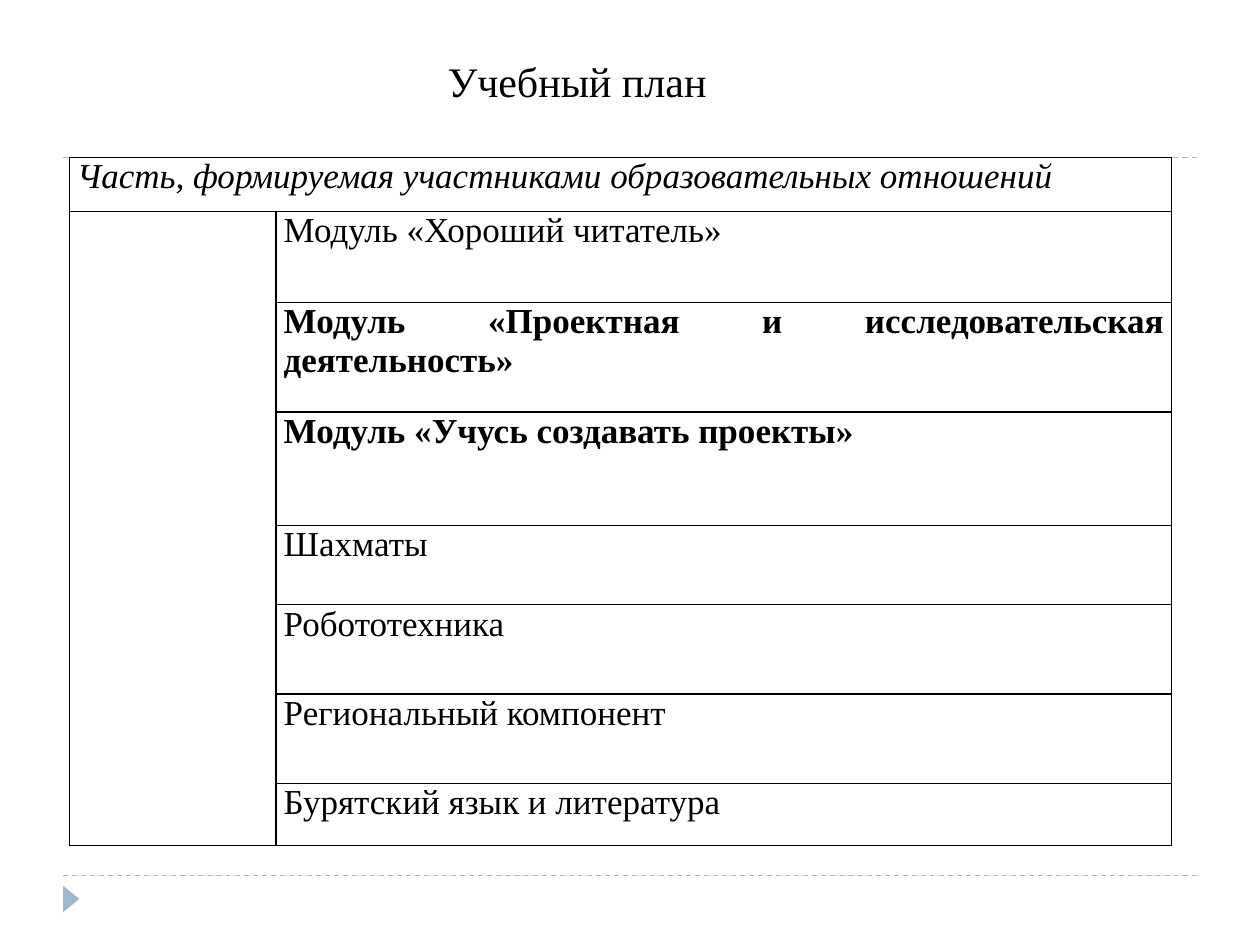
import pptx
import pptx.util
import pptx.dml.color
import pptx.enum.dml
import pptx.enum.shapes
import pptx.enum.text
import pptx.oxml.ns
from lxml import etree

Pt = pptx.util.Pt
FONT = "Times New Roman"
COLORS = {"text": "000000", "border": "000000", "accent": "9FB8CD"}
COLUMN_WIDTHS = [118.08, 511.92]
ROW_HEIGHTS = [30.96, 51.84, 62.64, 64.8, 45.36, 51.12, 51.12, 35.28]
SECTION = "Часть, формируемая участниками образовательных отношений\u00a0"
MODULES = [
    ("Модуль «Хороший читатель»", False),
    ("Модуль «Проектная и исследовательская деятельность»", True),
    ("Модуль «Учусь создавать проекты»", True),
    ("Шахматы", False),
    ("Робототехника", False),
    ("Региональный компонент", False),
    ("Бурятский язык и литература", False),
]


def color(name):
    return pptx.dml.color.RGBColor.from_string(COLORS[name])


def add_element(parent, tag, **attributes):
    return etree.SubElement(parent, pptx.oxml.ns.qn(tag), attributes)


def add_span(para, text, size, bold=False, italic=False):
    span = para.add_run()
    span.text = text
    span.font.name = FONT
    span.font.size = Pt(size)
    span.font.bold = bold
    span.font.italic = italic
    span.font.color.rgb = color("text")


def add_rule(page, left, top, width):
    rule = page.shapes.add_connector(
        pptx.enum.shapes.MSO_CONNECTOR.STRAIGHT,
        Pt(left), Pt(top), Pt(left + width), Pt(top))
    rule.line.color.rgb = color("accent")
    rule.line.width = Pt(0.75)
    rule.line.dash_style = pptx.enum.dml.MSO_LINE.DASH
    add_element(rule._element.spPr, "a:effectLst")


def add_marker(page, left, top, width, height):
    marker = page.shapes.add_shape(
        pptx.enum.shapes.MSO_SHAPE.ISOSCELES_TRIANGLE,
        Pt(left), Pt(top), Pt(width), Pt(height))
    marker.rotation = 90
    marker.shadow.inherit = False
    marker.fill.solid()
    marker.fill.fore_color.rgb = color("accent")
    marker.line.fill.background()


def add_title(page, left, top, width, height):
    box = page.shapes.add_textbox(Pt(left), Pt(top), Pt(width), Pt(height))
    frame = box.text_frame
    frame.word_wrap = False
    frame.auto_size = pptx.enum.text.MSO_AUTO_SIZE.SHAPE_TO_FIT_TEXT
    frame.vertical_anchor = pptx.enum.text.MSO_ANCHOR.MIDDLE
    para = frame.paragraphs[0]
    para.alignment = pptx.enum.text.PP_ALIGN.CENTER
    add_span(para, "Учебный план", 24)


def style_cell(cell):
    cell.margin_left = cell.margin_right = Pt(4.5)
    cell.margin_top = cell.margin_bottom = Pt(0)
    properties = cell._tc.get_or_add_tcPr()
    for side in ("a:lnL", "a:lnR", "a:lnT", "a:lnB"):
        border = add_element(properties, side, w=str(Pt(1)))
        fill = add_element(border, "a:solidFill")
        add_element(fill, "a:srgbClr", val=COLORS["border"])
    cell.fill.background()


def fill_cell(cell, text, bold=False, italic=False):
    para = cell.text_frame.paragraphs[0]
    para.alignment = pptx.enum.text.PP_ALIGN.JUSTIFY
    add_span(para, text, 20, bold, italic)


def add_plan(page, left, top, width, height):
    table = page.shapes.add_table(
        len(ROW_HEIGHTS), len(COLUMN_WIDTHS),
        Pt(left), Pt(top), Pt(width), Pt(height)).table
    table.first_row = False
    table.horz_banding = False
    for column, column_width in zip(table.columns, COLUMN_WIDTHS):
        column.width = Pt(column_width)
    for row, row_height in zip(table.rows, ROW_HEIGHTS):
        row.height = Pt(row_height)
    for cell in table.iter_cells():
        style_cell(cell)
    table.cell(0, 0).merge(table.cell(0, 1))
    table.cell(1, 0).merge(table.cell(len(MODULES), 0))
    fill_cell(table.cell(0, 0), SECTION, italic=True)
    for index, (name, bold) in enumerate(MODULES, start=1):
        fill_cell(table.cell(index, 1), name, bold)


def main():
    deck = pptx.Presentation()
    deck.slide_width, deck.slide_height = Pt(720), Pt(540)
    page = deck.slides.add_slide(deck.slide_layouts[6])
    for top in (500.4, 90):
        add_rule(page, 36, top, 648)
    add_marker(page, 33.12, 509.04, 15.12, 9.36)
    add_plan(page, 39.6, 90, sum(COLUMN_WIDTHS), sum(ROW_HEIGHTS))
    add_title(page, 247.68, 28.08, 164.16, 36)
    deck.save("out.pptx")


if __name__ == "__main__":
    main()
